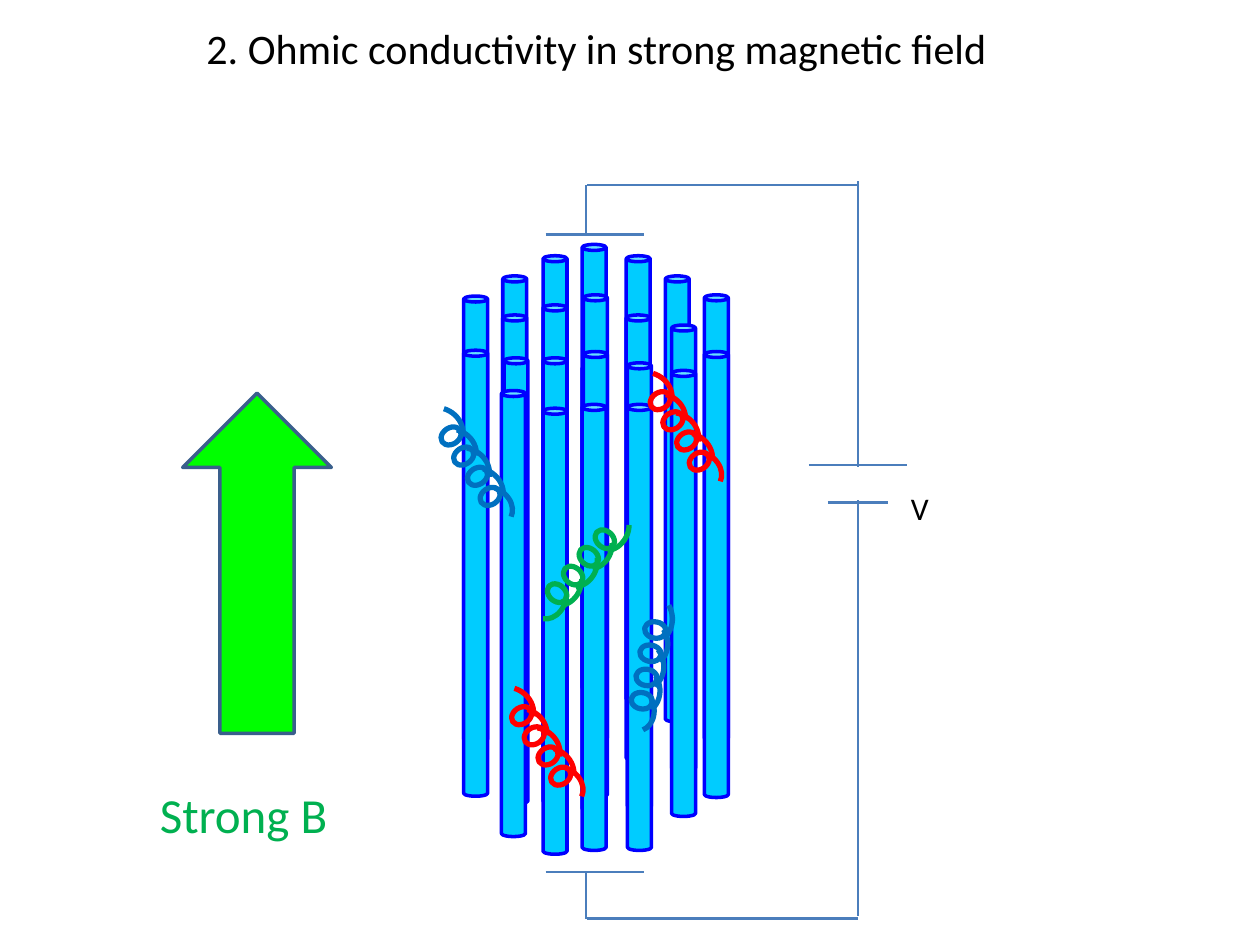
from dataclasses import dataclass
from math import cos, radians, sin
from typing import Optional

from lxml.etree import SubElement
from pptx import Presentation
from pptx.dml.color import RGBColor
from pptx.enum.shapes import MSO_CONNECTOR, MSO_SHAPE
from pptx.enum.text import MSO_AUTO_SIZE
from pptx.oxml.ns import qn
from pptx.util import Emu, Pt

PX = 9144  # EMU per px, 100 px to the inch
CYAN, BLUE, GREEN, RED = "00CCFF", "0070C0", "00B050", "FF0000"
WIRE, WHITE, BLACK = "4B7EBC", "FFFFFF", "000000"


@dataclass
class Box:
    x: float
    y: float
    w: int
    h: int


@dataclass
class CoilPart:
    """A loop or an arc; dx, dy run from the centre of the first loop."""
    dx: int
    dy: int
    w: int
    h: int
    arc: Optional[tuple[float, float]] = None


@dataclass
class Coil:
    x: int
    y: int
    rotation: float
    color: str


@dataclass
class Label:
    text: str
    box: Box
    size: int
    color: str


def px(value: float) -> Emu:
    return Emu(round(value * PX))


def rgb(color: str) -> RGBColor:
    return RGBColor.from_string(color)


def add_shape(shapes, kind, box: Box, fill: Optional[str], line: str, width: float):
    sp = shapes.add_shape(kind, px(box.x), px(box.y), px(box.w), px(box.h))
    sp.shadow.inherit = False
    if fill:
        sp.fill.solid()
        sp.fill.fore_color.rgb = rgb(fill)
    else:
        sp.fill.background()
    sp.line.color.rgb = rgb(line)
    sp.line.width = Pt(width)
    return sp


def add_label(shapes, label: Label) -> None:
    b = label.box
    tf = shapes.add_textbox(px(b.x), px(b.y), px(b.w), px(b.h)).text_frame
    tf.word_wrap = False
    tf.auto_size = MSO_AUTO_SIZE.SHAPE_TO_FIT_TEXT
    r = tf.paragraphs[0].add_run()
    r.text = label.text
    r.font.name = "Calibri"
    r.font.size = Pt(label.size)
    r.font.color.rgb = rgb(label.color)


def add_wire(shapes, x1: int, y1: int, x2: int, y2: int) -> None:
    cn = shapes.add_connector(MSO_CONNECTOR.STRAIGHT, px(x1), px(y1), px(x2), px(y2))
    cn.line.color.rgb = rgb(WIRE)
    cn.line.width = Pt(1.5)
    SubElement(cn._element.spPr, qn("a:effectLst"))


# Coil geometry, laid out for a coil rotated by BASE_ROTATION
BASE_ROTATION = 29
LOOP_TILT = 27.6
COIL_PARTS = [
    CoilPart(0, 0, 13, 17),
    CoilPart(-10, -4, 40, 36, (152.89, 206.5)),
    CoilPart(1, 13, 39, 36, (151.53, 203.32)),
    CoilPart(10, 16, 13, 17),
    CoilPart(21, 32, 13, 17),
    CoilPart(11, 28, 40, 36, (147.82, 206.5)),
    CoilPart(22, 44, 40, 36, (151.53, 204.83)),
    CoilPart(31, 48, 13, 17),
    CoilPart(31, 56, 37, 30, (152.89, 214.2)),
]


def add_coil(shapes, coil: Coil) -> None:
    turn = radians(coil.rotation - BASE_ROTATION)
    for part in COIL_PARTS:
        cx = coil.x + part.dx * cos(turn) - part.dy * sin(turn)
        cy = coil.y + part.dx * sin(turn) + part.dy * cos(turn)
        box = Box(cx - part.w / 2, cy - part.h / 2, part.w, part.h)
        kind = MSO_SHAPE.ARC if part.arc else MSO_SHAPE.OVAL
        sp = add_shape(shapes, kind, box, None, coil.color, 3)
        sp.rotation = coil.rotation
        if part.arc:
            sp.adjustments[0], sp.adjustments[1] = part.arc
        else:
            sp.rotation += LOOP_TILT


# Top left corners of the flux tubes, back to front
TUBES = [
    (462, 194), (462, 290), (431, 203), (399, 219), (528, 219), (497, 203),
    (463, 234), (497, 250), (559, 234), (368, 235), (431, 242), (463, 279),
    (533, 258), (399, 250), (400, 284), (431, 284), (462, 321), (498, 288),
    (398, 310), (368, 278), (431, 324), (498, 321), (533, 294), (559, 279),
]
COILS = [
    Coil(480, 428, 103.4, GREEN),
    Coil(520, 500, 72.6, BLUE),
    Coil(524, 318, BASE_ROTATION, RED),
    Coil(358, 346, BASE_ROTATION, BLUE),
    Coil(414, 568, BASE_ROTATION, RED),
]
# Electrode, lead and outer run at either end, as (electrode y, outer y)
ELECTRODES = [(186, 147), (692, 729)]


def main() -> None:
    prs = Presentation()
    prs.slide_width, prs.slide_height = px(1000), px(750)
    s = prs.slides.add_slide(prs.slide_layouts[6])

    # Magnetic field arrow
    add_shape(s.shapes, MSO_SHAPE.UP_ARROW, Box(145, 312, 118, 270), "00FF00", "3A5F8C", 2)
    add_label(s.shapes, Label("Strong B", Box(117, 618, 155, 57), 28, GREEN))

    # Flux tubes and spiralling particles
    plasma = s.shapes.add_group_shape().shapes
    for x, y in TUBES:
        add_shape(plasma, MSO_SHAPE.CAN, Box(x, y, 19, 354), CYAN, "0000FF", 2)
    for coil in COILS:
        add_coil(plasma, coil)

    # Title
    title = "2. Ohmic conductivity in strong magnetic field"
    add_label(s.shapes, Label(title, Box(154, 13, 645, 50), 24, BLACK))

    # Circuit with its voltage source
    circuit = s.shapes.add_group_shape().shapes
    for inner, outer in ELECTRODES:
        add_wire(circuit, 433, inner, 511, inner)
        add_wire(circuit, 465, inner, 465, outer)
        add_wire(circuit, 466, outer, 681, outer)
    add_wire(circuit, 681, 144, 681, 727)
    add_wire(circuit, 642, 369, 720, 369)
    add_wire(circuit, 657, 399, 705, 399)
    add_shape(circuit, MSO_SHAPE.RECTANGLE, Box(665, 372, 31, 24), WHITE, WHITE, 1.5)
    add_label(circuit, Label("V", Box(713, 383, 35, 40), 18, BLACK))

    prs.save("out.pptx")


if __name__ == "__main__":
    main()
